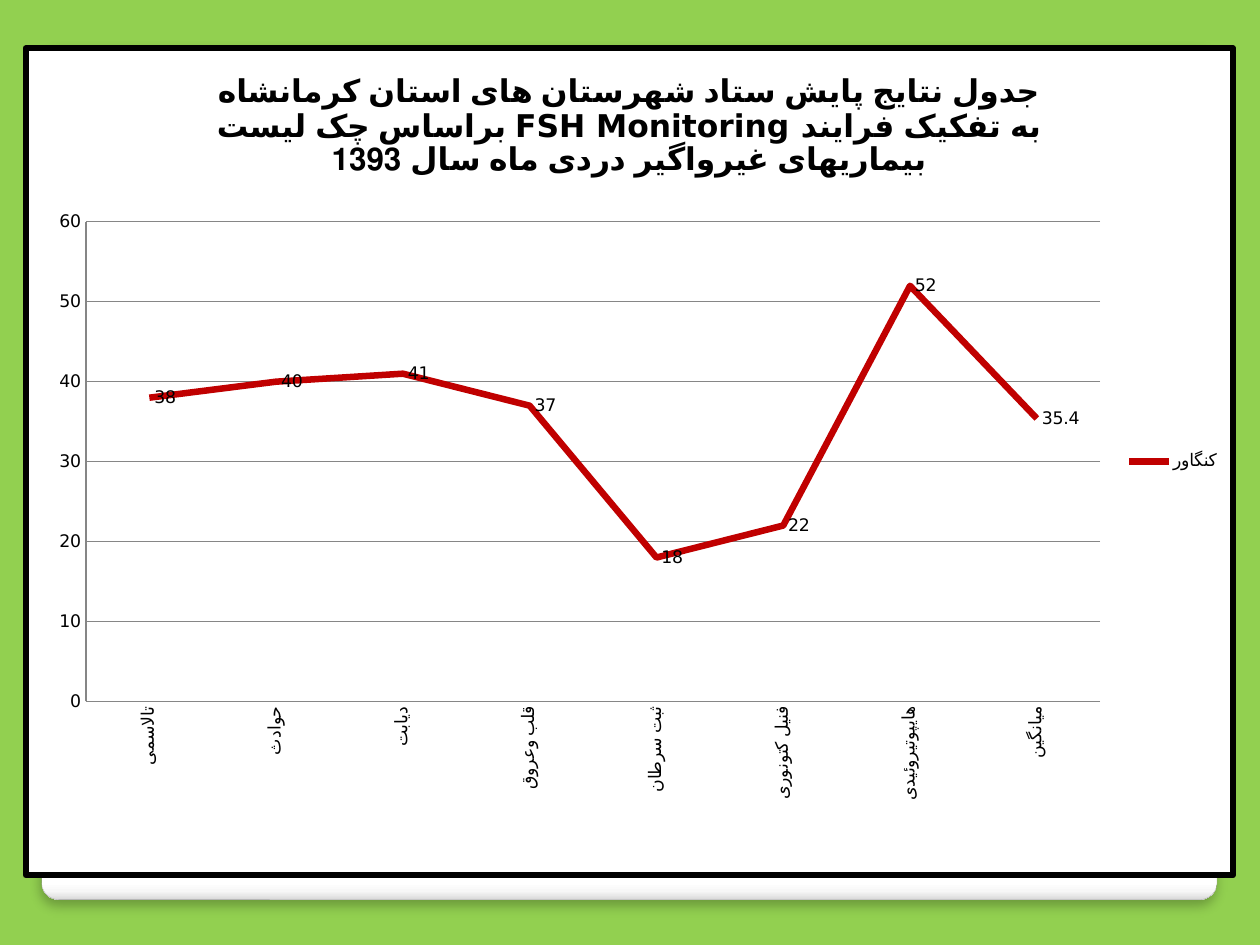
from lxml.etree import fromstring
from pptx import Presentation
from pptx.chart.data import CategoryChartData
from pptx.dml.color import RGBColor
from pptx.enum.chart import XL_CHART_TYPE, XL_LEGEND_POSITION, XL_MARKER_STYLE, XL_TICK_MARK
from pptx.enum.shapes import MSO_SHAPE
from pptx.oxml.ns import nsdecls, qn
from pptx.util import Inches, Pt


def paint(part, color):
    if hasattr(part, "solid"):
        part.solid()
        part.fore_color.rgb = RGBColor.from_string(color)
    else:
        part.color.rgb = RGBColor.from_string(color)


def build(text):
    head, tail = text.split(">", 1)
    return fromstring(f"{head} {nsdecls('a', 'c')}>{tail}")


font = "DejaVu Sans"
deck = Presentation()
deck.slide_width = Inches(10)
deck.slide_height = Inches(7.5)
slide = deck.slides.add_slide(deck.slide_layouts[6])
paint(slide.background.fill, "92D050")

card = slide.shapes.add_shape(
    MSO_SHAPE.ROUNDED_RECTANGLE, Inches(0.33), Inches(0.36), Inches(9.33), Inches(6.78))
card.adjustments[0] = 0.02
paint(card.line, "A4A4A4")
card.line.width = Pt(0.16)
stops = [(0, "FFFFFF"), (98, "FFFFFF"), (99, "F7F7F7"), (100, "DADADA")]
marks = "".join(
    f'<a:gs pos="{pos * 1000}"><a:srgbClr val="{color}"/></a:gs>' for pos, color in stops)
form = card._element.spPr
form.find(qn("a:prstGeom")).addnext(build(
    f'<a:gradFill><a:gsLst>{marks}</a:gsLst><a:lin ang="5400000" scaled="0"/></a:gradFill>'))
form.append(build(
    f'<a:effectLst><a:outerShdw blurRad="{Pt(6)}" dist="{Pt(4)}" dir="5400000" rotWithShape="0">'
    '<a:srgbClr val="000000"><a:alpha val="25000"/></a:srgbClr></a:outerShdw></a:effectLst>'))

data = CategoryChartData()
data.categories = ["تالاسمی", "حوادث", "دیابت", "قلب وعروق", "ثبت سرطان",
                   "فنیل کتونوری", "هایپوتیروئیدی", "میانگین"]
data.add_series("کنگاور", [38, 40, 41, 37, 18, 22, 52, 35.4])
chart = slide.shapes.add_chart(
    XL_CHART_TYPE.LINE, Inches(0.18), Inches(0.36), Inches(9.63), Inches(6.61), data).chart
chart.font.name = font
chart.font.size = Pt(10)
paint(chart.font, "000000")

chart.has_title = True
para = chart.chart_title.text_frame.paragraphs[0]
for text in ["جدول نتایج پایش ستاد شهرستان های استان کرمانشاه ",
             "براساس چک لیست FSH Monitoring به تفکیک فرایند ",
             "بیماریهای غیرواگیر دردی ماه سال 1393"]:
    run = para.add_run()
    run.text = text
    run.font.name = font
    run.font.size = Pt(18)
    run.font.bold = True
    paint(run.font, "000000")
chart.chart_title.include_in_layout = False

chart.has_legend = True
chart.legend.position = XL_LEGEND_POSITION.RIGHT
chart.legend.include_in_layout = False

for axis in (chart.category_axis, chart.value_axis):
    axis.major_tick_mark = XL_TICK_MARK.NONE
    axis.minor_tick_mark = XL_TICK_MARK.NONE
    axis.tick_labels.font.size = Pt(10)
    paint(axis.format.line, "868686")
chart.category_axis._element.find(qn("c:txPr")).find(qn("a:bodyPr")).set("rot", "-5400000")
scale = chart.value_axis
scale.minimum_scale = 0
scale.maximum_scale = 60
scale.major_unit = 10
scale.has_major_gridlines = True
paint(scale.major_gridlines.format.line, "868686")

plot = chart.plots[0]
plot.vary_by_categories = False
line = plot.series[0]
line.smooth = False
line.marker.style = XL_MARKER_STYLE.NONE
paint(line.format.line, "C00000")
line.format.line.width = Pt(3.75)
line.data_labels.show_value = True

root = chart._chartSpace.find(qn("c:chart"))
area = root.find(qn("c:plotArea"))
for old in area.findall(qn("c:layout")):
    area.remove(old)
sizes = "".join(f'<c:{key} val="{val}"/>' for key, val in
                [("x", 0.05), ("y", 0.21), ("w", 0.84), ("h", 0.58)])
area.insert(0, build(
    '<c:layout><c:manualLayout><c:layoutTarget val="inner"/><c:xMode val="edge"/>'
    f'<c:yMode val="edge"/>{sizes}</c:manualLayout></c:layout>'))
root.addnext(build(
    '<c:spPr><a:solidFill><a:srgbClr val="FFFFFF"/></a:solidFill>'
    f'<a:ln w="{Pt(3.35)}"><a:solidFill><a:srgbClr val="000000"/></a:solidFill>'
    '<a:round/></a:ln></c:spPr>'))

deck.save("out.pptx")
